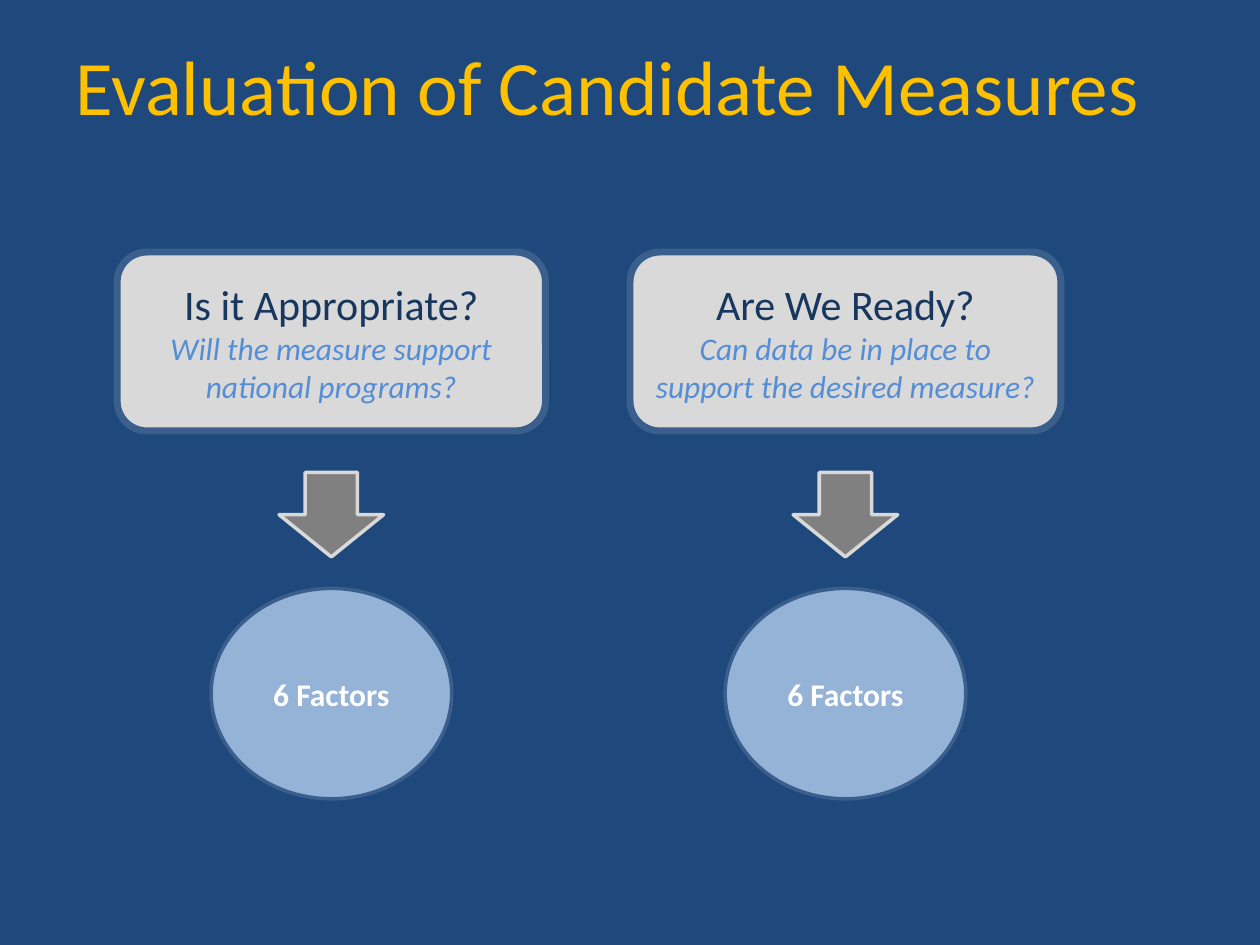
import pptx
import pptx.util
import pptx.dml.color
import pptx.enum.shapes
import pptx.enum.text

RGB = pptx.dml.color.RGBColor
SHAPE = pptx.enum.shapes.MSO_SHAPE
ALIGN = pptx.enum.text.PP_ALIGN
MIDDLE = pptx.enum.text.MSO_ANCHOR.MIDDLE

PX = 9144  # EMU per px, 100 px to the inch
NAVY = RGB(0x1F, 0x49, 0x7D)
GOLD = RGB(0xFF, 0xC0, 0x00)
LIGHT_GRAY = RGB(0xD9, 0xD9, 0xD9)
MID_GRAY = RGB(0x80, 0x80, 0x80)
EDGE_BLUE = RGB(0x3A, 0x5F, 0x8C)
DARK_BLUE = RGB(0x17, 0x37, 0x5E)
BRIGHT_BLUE = RGB(0x55, 0x8E, 0xD5)
PALE_BLUE = RGB(0x95, 0xB3, 0xD7)
WHITE = RGB(0xFF, 0xFF, 0xFF)


def add_line(paragraph, text, size, color, align=ALIGN.CENTER, **style):
    paragraph.alignment = align
    run = paragraph.add_run()
    run.text = text
    run.font.color.rgb = color
    formats = {"name": "Calibri", "size": pptx.util.Pt(size), **style}
    for attribute, value in formats.items():
        setattr(run.font, attribute, value)


def add_centered(kind, center, top, width, height, fill, edge, weight):
    shape = slide.shapes.add_shape(
        kind, round((center - width / 2) * PX), top * PX, width * PX, height * PX)
    shape.shadow.inherit = False
    shape.fill.solid()
    shape.fill.fore_color.rgb = fill
    shape.line.color.rgb = edge
    shape.line.width = pptx.util.Pt(weight)
    shape.text_frame.word_wrap = True
    shape.text_frame.vertical_anchor = MIDDLE
    return shape


deck = pptx.Presentation()
deck.slide_width, deck.slide_height = 1000 * PX, 750 * PX
slide = deck.slides.add_slide(deck.slide_layouts[5])
slide.background.fill.solid()
slide.background.fill.fore_color.rgb = NAVY

# Title
title = slide.shapes.title
for attribute, value in {"left": 50, "top": 17, "width": 900, "height": 100}.items():
    setattr(title, attribute, value * PX)
title.text_frame.vertical_anchor = MIDDLE
add_line(title.text_frame.paragraphs[0], "Evaluation of Candidate Measures",
         44, GOLD, ALIGN.LEFT)

# One column per question: question box, arrow, factor count
columns = [
    (263, 340, "Is it Appropriate?",
     "Will the measure support national programs?"),
    (671, 342, "Are We Ready?",
     "Can data be in place to support the desired measure?"),
]
for center, box_width, question, detail in columns:
    box = add_centered(SHAPE.ROUNDED_RECTANGLE, center, 200, box_width, 142,
                       LIGHT_GRAY, EDGE_BLUE, 4)
    add_line(box.text_frame.paragraphs[0], question, 24, DARK_BLUE)
    add_line(box.text_frame.add_paragraph(), detail, 18, BRIGHT_BLUE, italic=True)

    add_centered(SHAPE.DOWN_ARROW, center, 375, 83, 67, MID_GRAY, LIGHT_GRAY, 2)

    factors = add_centered(SHAPE.OVAL, center, 467, 191, 167,
                           PALE_BLUE, EDGE_BLUE, 2)
    add_line(factors.text_frame.paragraphs[0], "6 Factors", 18, WHITE, bold=True)

deck.save("out.pptx")
